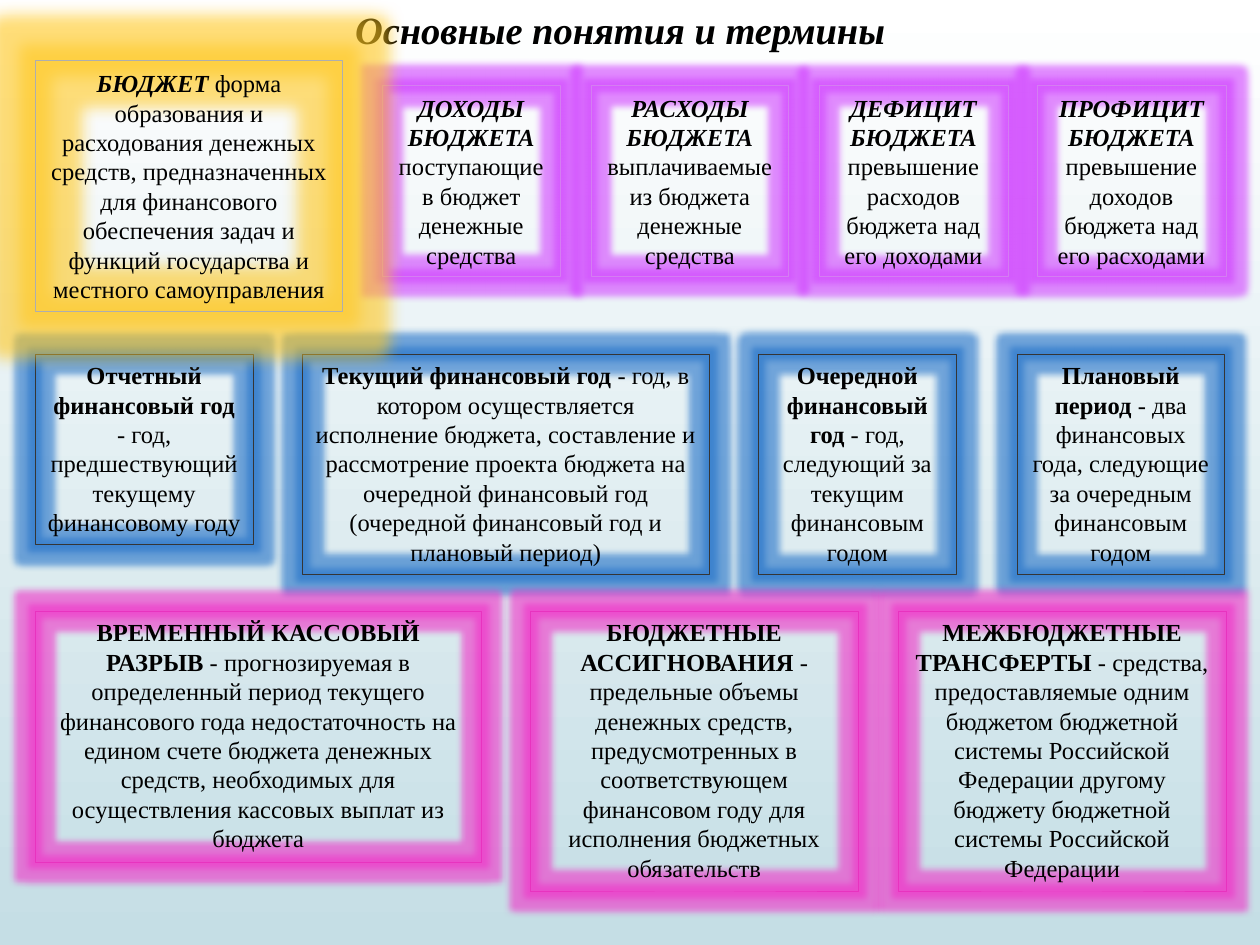
from lxml.etree import SubElement
from pptx import Presentation
from pptx.dml.color import RGBColor
from pptx.enum.shapes import MSO_SHAPE
from pptx.enum.text import MSO_ANCHOR, MSO_AUTO_SIZE, PP_ALIGN
from pptx.oxml.ns import qn
from pptx.util import Inches, Pt

BLACK = RGBColor(0x00, 0x00, 0x00)
WHITE = RGBColor(0xFF, 0xFF, 0xFF)
PALE_TEAL = RGBColor(0xC5, 0xDE, 0xE5)
GREY = RGBColor(0xAE, 0xAE, 0xAE)
LILAC = RGBColor(0xD5, 0x7D, 0xF2)
CHARCOAL = RGBColor(0x35, 0x35, 0x35)
PINK = RGBColor(0xE8, 0x33, 0xBF)
GOLD_GLOW = RGBColor(0xFF, 0xC8, 0x20)
VIOLET_GLOW = RGBColor(0xD0, 0x40, 0xFF)
BLUE_GLOW = RGBColor(0x20, 0x70, 0xC8)
PINK_GLOW = RGBColor(0xF0, 0x30, 0xC8)

deck = Presentation()
deck.slide_width, deck.slide_height = Inches(10), Inches(7.5)
COLUMN = deck.slide_width / 100
ROW = deck.slide_height / 75
page = deck.slides.add_slide(deck.slide_layouts[6])

backdrop = page.background.fill
backdrop.gradient()
backdrop.gradient_angle = 270
for stop, colour in zip(backdrop.gradient_stops, (WHITE, PALE_TEAL)):
    stop.color.rgb = colour


def place(column, row, width, height):
    return [round(n) for n in (column * COLUMN, row * ROW, width * COLUMN, height * ROW)]


def add_span(para, words, size, bold, italic):
    span = para.add_run()
    span.text = words
    span.font.color.rgb = BLACK
    style = {"name": "Times New Roman", "size": Pt(size), "bold": bold, "italic": italic}
    for key, value in style.items():
        setattr(span.font, key, value)


title = page.shapes.add_textbox(*place(27.2, 0, 45.7, 4.7))
title.text_frame.word_wrap = False
add_span(title.text_frame.paragraphs[0], "Основные понятия и термины", 22, True, True)

GROUPS = [
    {"row": 6.8, "line": LILAC, "glow": VIOLET_GLOW, "radius": 8,
     "anchor": MSO_ANCHOR.MIDDLE, "italic": True, "terms": [
         (30.3, 14.2, 15.1, "ДОХОДЫ БЮДЖЕТА ", "поступающие в бюджет денежные средства"),
         (46.9, 15.7, 15.1, "РАСХОДЫ БЮДЖЕТА ", "выплачиваемые из бюджета денежные средства"),
         (65, 15, 15.1, "ДЕФИЦИТ БЮДЖЕТА ", "превышение расходов бюджета над его доходами"),
         (82.3, 15, 15.1, "ПРОФИЦИТ БЮДЖЕТА ", "превышение доходов бюджета над его расходами")]},
    {"row": 28.1, "line": CHARCOAL, "glow": BLUE_GLOW, "radius": 8,
     "anchor": MSO_ANCHOR.TOP, "italic": False, "terms": [
         (2.8, 17.3, 15.1, "Отчетный финансовый год",
          " - год, предшествующий текущему финансовому году"),
         (24, 32.3, 17.5, "Текущий финансовый год",
          " - год, в котором осуществляется исполнение бюджета, составление и рассмотрение "
          "проекта бюджета на очередной финансовый год (очередной финансовый год и плановый период)"),
         (60.2, 15.7, 17.5, "Очередной финансовый год",
          " - год, следующий за текущим финансовым годом"),
         (80.7, 16.5, 17.5, "Плановый период",
          " - два финансовых года, следующие за очередным финансовым годом")]},
    {"row": 48.5, "line": PINK, "glow": PINK_GLOW, "radius": 8,
     "anchor": MSO_ANCHOR.TOP, "italic": False, "terms": [
         (2.8, 35.4, 19.9, "ВРЕМЕННЫЙ КАССОВЫЙ РАЗРЫВ",
          " - прогнозируемая в определенный период текущего финансового года недостаточность "
          "на едином счете бюджета денежных средств, необходимых для осуществления "
          "кассовых выплат из бюджета"),
         (42.1, 26, 22.2, "БЮДЖЕТНЫЕ АССИГНОВАНИЯ",
          " - предельные объемы денежных средств, предусмотренных в соответствующем "
          "финансовом году для исполнения бюджетных обязательств"),
         (71.3, 26, 22.2, "МЕЖБЮДЖЕТНЫЕ ТРАНСФЕРТЫ",
          " - средства, предоставляемые одним бюджетом бюджетной системы Российской Федерации "
          "другому бюджету бюджетной системы Российской Федерации")]},
    {"row": 4.8, "line": GREY, "glow": GOLD_GLOW, "radius": 18,
     "anchor": MSO_ANCHOR.MIDDLE, "italic": True, "terms": [
         (2.8, 24.4, 19.9, "БЮДЖЕТ ",
          "форма образования и расходования денежных средств, предназначенных для финансового "
          "обеспечения задач и функций государства и местного самоуправления")]},
]

for group in GROUPS:
    for column, width, height, term, meaning in group["terms"]:
        box = page.shapes.add_shape(
            MSO_SHAPE.RECTANGLE, *place(column, group["row"], width, height))
        box.fill.background()
        box.line.color.rgb = group["line"]
        box.line.width = Pt(0.25)
        box.shadow.inherit = False
        effects = box.element.spPr.find(qn("a:effectLst"))
        glow = SubElement(effects, qn("a:glow"), rad=str(Pt(group["radius"])))
        tint = SubElement(glow, qn("a:srgbClr"), val=str(group["glow"]))
        SubElement(tint, qn("a:alpha"), val="60000")
        frame = box.text_frame
        layout = {"word_wrap": True, "auto_size": MSO_AUTO_SIZE.SHAPE_TO_FIT_TEXT,
                  "vertical_anchor": group["anchor"]}
        for key, value in layout.items():
            setattr(frame, key, value)
        para = frame.paragraphs[0]
        para.alignment = PP_ALIGN.CENTER
        add_span(para, term, 14, True, group["italic"])
        add_span(para, meaning, 14, False, False)

deck.save("out.pptx")
